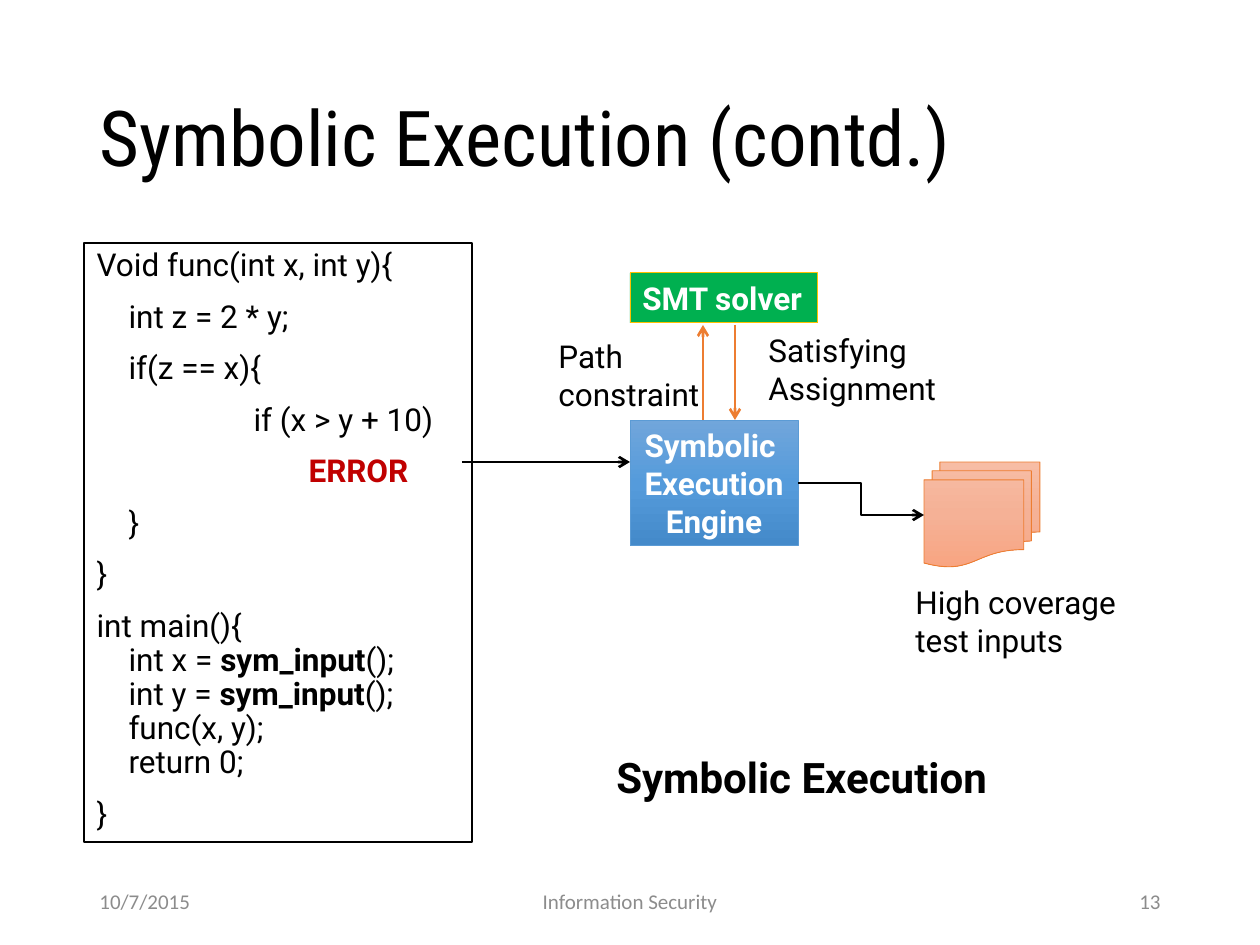
from copy import deepcopy
from dataclasses import dataclass

from lxml.etree import SubElement
from pptx import Presentation
from pptx.dml.color import RGBColor
from pptx.enum.shapes import MSO_CONNECTOR, MSO_SHAPE
from pptx.enum.text import MSO_ANCHOR, MSO_AUTO_SIZE, PP_ALIGN
from pptx.oxml.ns import qn
from pptx.util import Emu, Pt

PX_PER_INCH = 126


@dataclass(frozen=True)
class Theme:
    black: str = "000000"
    white: str = "FFFFFF"
    grey: str = "8C8C8C"
    error: str = "C00000"
    green: str = "00B050"
    gold: str = "FFC000"
    blue: str = "5B9BD5"
    orange: str = "ED7D31"
    blue_gradient: tuple = ("71A6DB", "559BDB", "448ACA")
    orange_gradient: tuple = ("F7BDA5", "F5B196", "F8A582")
    title_font: str = "Roboto Condensed"
    text_font: str = "Roboto"
    footer_font: str = "Calibri"
    title_size: int = 44
    caption_size: int = 24
    text_size: int = 18
    footer_size: int = 12


THEME = Theme()
INDENT = 32

# Each paragraph: left margin, first-line indent, lines of (text, style) runs
CODE = [
    (0, 0, [[("Void func(int x, int y){", "")]]),
    (INDENT, 0, [[("int z = 2 * y;", "")]]),
    (INDENT, 0, [[("if(z == x){", "")]]),
    (157, 0, [[("if (x > y + 10)", "")]]),
    (212, 0, [[("ERROR", "error")]]),
    (INDENT, 0, [[("}", "")]]),
    (0, 0, [[("}", "")]]),
    (INDENT, -INDENT, [
        [("int main(){", "")],
        [("int x = ", ""), ("sym_input", "bold"), ("();", "")],
        [("int y = ", ""), ("sym_input", "bold"), ("();", "")],
        [("func(x, y);", "")],
        [("return 0;", "")],
    ]),
    (0, 0, [[("}", "")]]),
]


def px(length):
    return Emu(round(length * 914400 / PX_PER_INCH))


def rgb(color):
    return RGBColor.from_string(color)


def place(shape, box):
    shape.left, shape.top, shape.width, shape.height = map(px, box)


def set_font(font, name, size, color, bold=False):
    font.name, font.size, font.bold = name, Pt(size), bold
    font.color.rgb = rgb(color)


def write(shape, lines, size=THEME.text_size, color=THEME.black, bold=False,
          name=THEME.text_font, align=PP_ALIGN.LEFT, anchor=MSO_ANCHOR.TOP, wrap=False):
    frame = shape.text_frame
    frame.word_wrap = wrap
    frame.auto_size = MSO_AUTO_SIZE.NONE if wrap else MSO_AUTO_SIZE.SHAPE_TO_FIT_TEXT
    frame.vertical_anchor = anchor
    frame.text = "\n".join(lines)
    for paragraph in frame.paragraphs:
        paragraph.alignment = align
        set_font(paragraph.font, name, size, color, bold)


def add_label(slide, box, lines, **style):
    write(slide.shapes.add_textbox(*map(px, box)), lines, **style)


def add_box(slide, kind, box, fill, line):
    """Add a preset shape; fill is one colour or a tuple of gradient colours."""
    shape = slide.shapes.add_shape(kind, *map(px, box))
    shape.shadow.inherit = False
    shape.line.color.rgb = rgb(line)
    shape.line.width = Pt(0.5)
    if isinstance(fill, str):
        shape.fill.solid()
        shape.fill.fore_color.rgb = rgb(fill)
        return shape
    shape.fill.gradient()
    shape.fill.gradient_angle = 270
    first_stop = next(shape._element.spPr.iter(qn("a:gs")))
    first_stop.addnext(deepcopy(first_stop))
    for i, (stop, color) in enumerate(zip(shape.fill.gradient_stops, fill)):
        stop.position = i / 2
        stop.color.rgb = rgb(color)
    return shape


def add_arrow(slide, start, end, color, kind=MSO_CONNECTOR.STRAIGHT):
    arrow = slide.shapes.add_connector(kind, *map(px, start + end))
    arrow.line.color.rgb = rgb(color)
    arrow.line.width = Pt(1.5)
    SubElement(arrow.line._get_or_add_ln(), qn("a:tailEnd"), type="arrow")
    SubElement(arrow._element.spPr, qn("a:effectLst"))


def fill_title(title, box):
    place(title, box)
    write(title, ["Symbolic Execution (contd.)"], size=THEME.title_size,
          name=THEME.title_font, anchor=MSO_ANCHOR.MIDDLE, wrap=True)
    title.text_frame.paragraphs[0].line_spacing = 0.9


def fill_code(body, box):
    place(body, box)
    body.fill.solid()
    body.fill.fore_color.rgb = rgb(THEME.white)
    body.line.color.rgb = rgb(THEME.black)
    body.line.width = Pt(1)
    write(body, [""] * len(CODE), wrap=True)
    for paragraph, (margin, indent, lines) in zip(body.text_frame.paragraphs, CODE):
        paragraph.line_spacing = 0.9
        paragraph.space_before = Pt(10)
        properties = paragraph._p.get_or_add_pPr()
        properties.set("marL", str(px(margin)))
        properties.set("indent", str(px(indent)))
        bullet = SubElement(properties, qn("a:buNone"))
        properties.find(qn("a:defRPr")).addprevious(bullet)
        for i, line in enumerate(lines):
            if i:
                paragraph.add_line_break()
            for text, style in line:
                run = paragraph.add_run()
                run.text = text
                set_font(run.font, THEME.text_font, THEME.text_size,
                         THEME.error if style == "error" else THEME.black, bool(style))


def add_diagram(slide, left, top):
    def at(x, y, *size):
        return (left + x, top + y, *size)

    engine = add_box(slide, MSO_SHAPE.RECTANGLE, at(84, 147, 168, 126),
                     THEME.blue_gradient, THEME.blue)
    write(engine, ["Symbolic ", "Execution", "Engine"], color=THEME.white, bold=True,
          align=PP_ALIGN.CENTER, anchor=MSO_ANCHOR.MIDDLE, wrap=True)
    solver = add_box(slide, MSO_SHAPE.RECTANGLE, at(84, 0, 188, 50), THEME.green, THEME.gold)
    write(solver, ["SMT solver"], color=THEME.white, bold=True)
    add_box(slide, MSO_SHAPE.FLOWCHART_MULTIDOCUMENT, at(378, 189, 116, 105),
            THEME.orange_gradient, THEME.orange)

    add_arrow(slide, at(-84, 189), at(84, 189), THEME.black)
    add_arrow(slide, at(157, 147), at(157, 52), THEME.orange)
    add_arrow(slide, at(189, 52), at(189, 147), THEME.orange)
    add_arrow(slide, at(252, 210), at(378, 242), THEME.black, MSO_CONNECTOR.ELBOW)

    add_label(slide, at(0, 58, 168, 89), ["Path", "constraint"])
    add_label(slide, at(210, 52, 203, 89), ["Satisfying", "Assignment"])
    add_label(slide, at(357, 304, 237, 89), ["High coverage", "test inputs"])
    add_label(slide, at(58, 472, 401, 63), ["Symbolic Execution"],
              size=THEME.caption_size, bold=True)


def add_footer(slide, top, height):
    for left, width, text, align in (
        (87, 283, "10/7/2015", PP_ALIGN.LEFT),
        (417, 426, "Information Security", PP_ALIGN.CENTER),
        (890, 283, "13", PP_ALIGN.RIGHT),
    ):
        add_label(slide, (left, top, width, height), [text], size=THEME.footer_size,
                  color=THEME.grey, name=THEME.footer_font, align=align,
                  anchor=MSO_ANCHOR.MIDDLE, wrap=True)


def main():
    presentation = Presentation()
    presentation.slide_width, presentation.slide_height = px(1260), px(945)
    slide = presentation.slides.add_slide(presentation.slide_layouts[1])
    fill_title(slide.shapes.title, (87, 50, 1086, 183))
    fill_code(slide.placeholders[1], (84, 243, 388, 599))
    add_diagram(slide, 546, 273)
    add_footer(slide, 876, 50)
    presentation.save("out.pptx")


if __name__ == "__main__":
    main()
